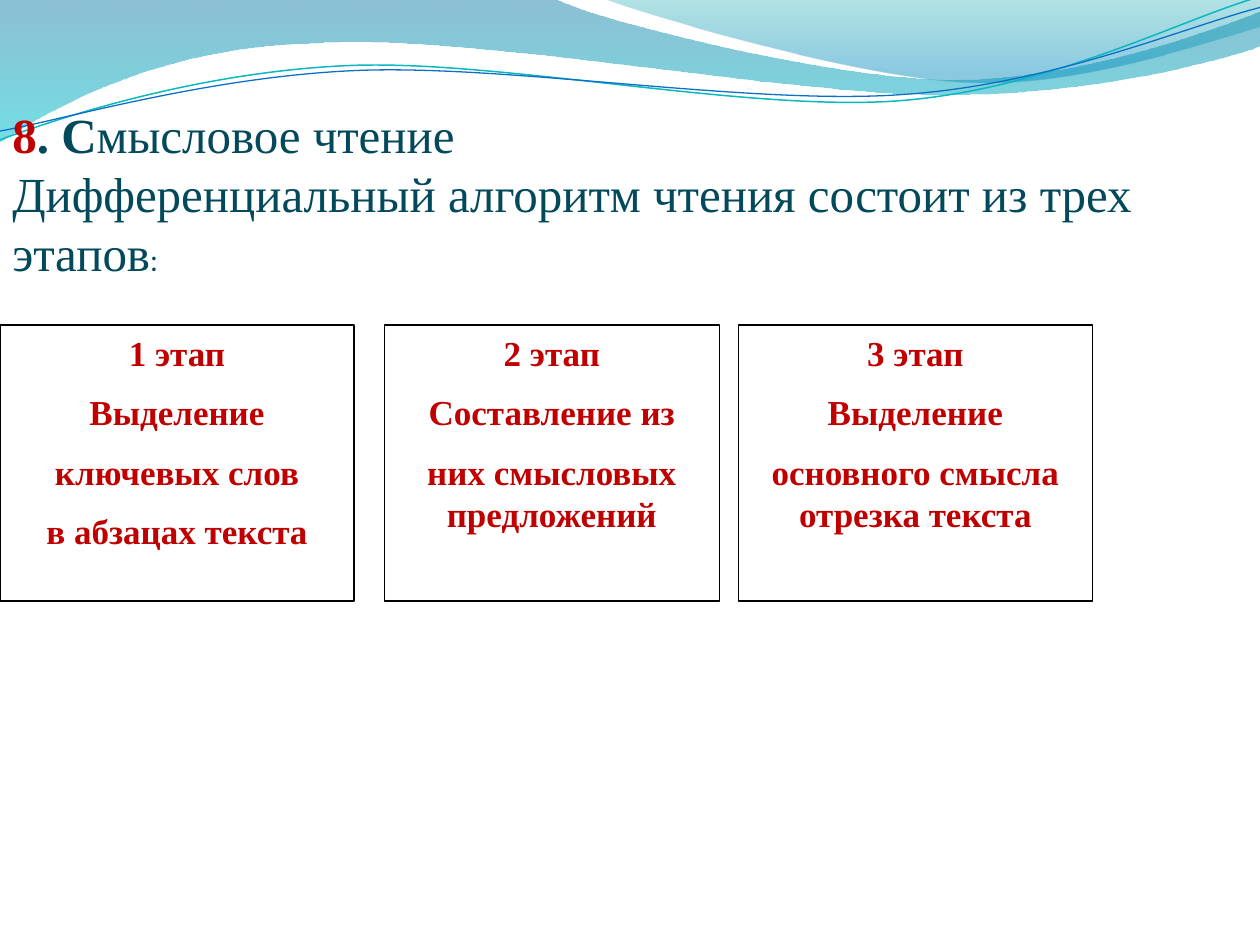
"""Build a slide on the three stages of meaningful reading."""
from math import cos, radians, sin
from lxml.etree import SubElement
from pptx import Presentation
from pptx.dml.color import RGBColor
from pptx.enum.shapes import MSO_SHAPE
from pptx.enum.text import MSO_ANCHOR, MSO_AUTO_SIZE, PP_ALIGN
from pptx.oxml.ns import qn
from pptx.util import Inches, Pt

RED = RGBColor(0xC0, 0x00, 0x00)
DARK_TEAL = RGBColor(0x03, 0x49, 0x5C)
BLACK = RGBColor(0x00, 0x00, 0x00)
WHITE = RGBColor(0xFF, 0xFF, 0xFF)
BLUE = RGBColor(0x00, 0x74, 0xA1)
CYAN = RGBColor(0x00, 0xC6, 0xCF)
TEAL = RGBColor(0x00, 0xA1, 0xA9)
SKY = RGBColor(0x00, 0x8B, 0xBF)
TURQUOISE_LINE = RGBColor(0x0A, 0xB8, 0xBF)
BLUE_LINE = RGBColor(0x0F, 0x6F, 0xC6)
SERIF = "Times New Roman"
LINE_TILT = 2.7

FILLED_WAVES = [
    ([(0, 0), (4.4, -0.01), (4.76, 0.17, 6.64, 0.63, 7.58, 0.63),
      (8.53, 0.63, 9.58, 0.26, 10, 0.09), (10.01, 0.36),
      (9.83, 0.44, 8.7, 0.76, 7.46, 0.75), (6.22, 0.75, 3.82, 0.28, 2.57, 0.34),
      (1.29, 0.36, 0.46, 0.83, -0.01, 1.13), (0, 0)],
     [(0, BLUE, 45), (1, CYAN, 55)]),
    ([(4.79, -0.01), (5.09, 0.11, 6.82, 0.62, 7.69, 0.65),
      (8.56, 0.69, 9.61, 0.32, 10, 0.21), (10, 0), (4.79, -0.01)],
     [(0, TEAL, 30), (0.8, SKY, 45)]),
]
LINE_WAVES = [
    ([(0, 1.11), (0.48, 0.93, 1.58, 0.57, 2.77, 0.52),
      (3.95, 0.47, 5.93, 0.89, 7.13, 0.8), (8.33, 0.71, 9.38, 0.15, 9.98, -0.02)],
     (4.99, 0.58), TURQUOISE_LINE, 0.85),
    ([(0, 1.04), (0.47, 0.96, 1.64, 0.61, 2.83, 0.56),
      (4.03, 0.51, 5.97, 0.84, 7.17, 0.75), (8.36, 0.67, 9.41, 0.21, 10, 0.06)],
     (5, 0.59), BLUE_LINE, 0.75),
]
HEADING = [
    [("8", dict(color=RED, bold=True)), (". С", dict(bold=True)), ("мысловое чтение", {})],
    [("Дифференциальный алгоритм чтения состоит из трех этапов", {}),
     (":", dict(size=18, font="TeX Gyre Pagella"))],
]
STAGES = [
    (0, 2.81, ["1 этап", "Выделение", "ключевых слов", "в абзацах текста"]),
    (3.05, 2.66, ["2 этап", "Составление из", "них смысловых предложений"]),
    (5.86, 2.81, ["3 этап", "Выделение", "основного смысла отрезка текста"]),
]
STAGE_TOP, STAGE_HEIGHT = 2.58, 2.19


def add_text(paragraph, text, size=28, font=SERIF, color=DARK_TEAL, bold=False):
    run = paragraph.add_run()
    run.text = text
    run.font.size = Pt(size)
    run.font.name = font
    run.font.color.rgb = color
    run.font.bold = bold


def next_paragraph(frame, index):
    return frame.add_paragraph() if index else frame.paragraphs[0]


def turn(point, center, degrees):
    x, y = point[0] - center[0], point[1] - center[1]
    cosine, sine = cos(radians(degrees)), sin(radians(degrees))
    return center[0] + x * cosine - y * sine, center[1] + x * sine + y * cosine


def add_wave(slide, segments, close, center=(0, 0), tilt=0):
    points = [turn(pair, center, tilt) for segment in segments
              for pair in zip(segment[::2], segment[1::2])]
    points = [(Inches(x), Inches(y)) for x, y in points]
    builder = slide.shapes.build_freeform(*points[0], scale=1.0)
    builder.add_line_segments(points[1:], close=close)
    shape = builder.convert_to_shape()
    shape.shadow.inherit = False
    shape.rotation = -tilt % 360
    steps = iter(list(shape._element.iter(qn("a:lnTo"))))
    for segment in segments[1:]:
        step = next(steps)
        if len(segment) == 6:
            step.tag = qn("a:cubicBezTo")
            for extra in (next(steps), next(steps)):
                step.append(extra[0])
                extra.getparent().remove(extra)
    return shape


def add_filled_wave(slide, segments, stops):
    shape = add_wave(slide, segments, True)
    shape.line.fill.background()
    shape.fill.gradient()
    shape.fill.gradient_angle = 270
    for stop, (position, color, _) in zip(shape.fill.gradient_stops, stops):
        stop.position = position
        stop.color.rgb = color
    colors = shape._element.spPr.find(qn("a:gradFill")).iter(qn("a:srgbClr"))
    for element, (_, _, opacity) in zip(colors, stops):
        SubElement(element, qn("a:alpha")).set("val", str(opacity * 1000))


def add_line_wave(slide, segments, center, color, width):
    shape = add_wave(slide, segments, False, center, LINE_TILT)
    shape.fill.background()
    shape.line.color.rgb = color
    shape.line.width = Pt(width)


def add_heading(slide):
    box = slide.shapes.add_textbox(Inches(0), Inches(0.78), Inches(9.77), Inches(1.51))
    box.text_frame.word_wrap = True
    box.text_frame.auto_size = MSO_AUTO_SIZE.SHAPE_TO_FIT_TEXT
    for index, runs in enumerate(HEADING):
        paragraph = next_paragraph(box.text_frame, index)
        for text, style in runs:
            add_text(paragraph, text, **style)


def add_stage(slide, left, width, lines):
    shape = slide.shapes.add_shape(MSO_SHAPE.RECTANGLE, Inches(left), Inches(STAGE_TOP),
                                   Inches(width), Inches(STAGE_HEIGHT))
    shape.shadow.inherit = False
    shape.fill.solid()
    shape.fill.fore_color.rgb = WHITE
    shape.line.color.rgb = BLACK
    shape.line.width = Pt(0.75)
    frame = shape.text_frame
    frame.word_wrap = True
    frame.vertical_anchor = MSO_ANCHOR.TOP
    for index, line in enumerate(lines):
        paragraph = next_paragraph(frame, index)
        paragraph.alignment = PP_ALIGN.CENTER
        paragraph.space_after = Pt(10)
        add_text(paragraph, line, size=20, color=RED, bold=True)


def main():
    presentation = Presentation()
    presentation.slide_width, presentation.slide_height = Inches(10), Inches(7.5)
    slide = presentation.slides.add_slide(presentation.slide_layouts[6])
    for wave in FILLED_WAVES:
        add_filled_wave(slide, *wave)
    for wave in LINE_WAVES:
        add_line_wave(slide, *wave)
    add_heading(slide)
    for stage in STAGES:
        add_stage(slide, *stage)
    presentation.save("out.pptx")


if __name__ == "__main__":
    main()
